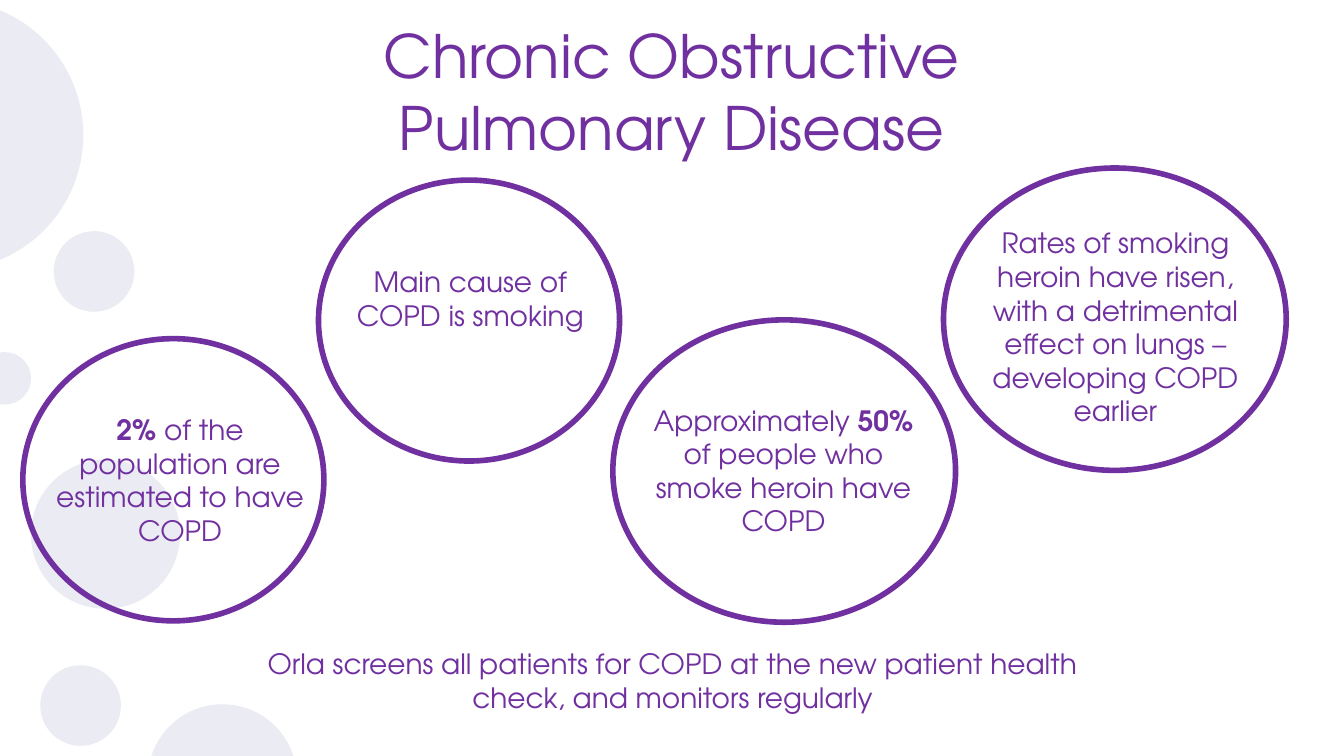
from dataclasses import dataclass

from lxml import etree
from pptx import Presentation
from pptx.dml.color import RGBColor
from pptx.enum.shapes import MSO_SHAPE
from pptx.enum.text import MSO_ANCHOR, MSO_AUTO_SIZE, PP_ALIGN
from pptx.oxml.ns import qn
from pptx.util import Inches, Pt

ELLIPSE = MSO_SHAPE.OVAL
CENTER = PP_ALIGN.CENTER
TOP = MSO_ANCHOR.TOP
GROW = MSO_AUTO_SIZE.SHAPE_TO_FIT_TEXT
BLANK_LAYOUT = 6

# The slide is a 16:9 grid of square cells, 100 columns by 56.25 rows
COLUMNS, ROWS = 100, 56.25
CELL = 0.1


@dataclass(frozen=True)
class Theme:
    font: str = "TeX Gyre Adventor"
    ink: RGBColor = RGBColor(0x70, 0x30, 0xA0)
    dot: RGBColor = RGBColor(0x44, 0x4B, 0x98)
    dot_opacity: int = 11
    title_size: int = 32
    body_size: int = 15
    ring_width: int = 3


def cells(*lengths):
    return [Inches(length * CELL) for length in lengths]


class SlideBuilder:
    def __init__(self, page, theme):
        self.page = page
        self.theme = theme

    def ellipse(self, area, shapes):
        shape = shapes.add_shape(ELLIPSE, *cells(*area))
        shape.shadow.inherit = False
        return shape

    def dot(self, left, top, size):
        shape = self.ellipse((left, top, size, size), self.page.shapes)
        shape.fill.solid()
        shape.fill.fore_color.rgb = self.theme.dot
        shape.line.fill.background()
        color = shape.element.spPr.find(f".//{qn('a:srgbClr')}")
        opacity = etree.SubElement(color, qn("a:alpha"))
        opacity.set("val", str(self.theme.dot_opacity * 1000))

    def ring(self, area, shapes):
        shape = self.ellipse(area, shapes)
        shape.fill.background()
        shape.line.color.rgb = self.theme.ink
        shape.line.width = Pt(self.theme.ring_width)

    def text(self, area, spans, size, shapes=None):
        """Write centred text; spans are (wording, bold) pairs."""
        box = (shapes or self.page.shapes).add_textbox(*cells(*area))
        frame_format = {
            "word_wrap": True, "auto_size": GROW, "vertical_anchor": TOP,
            "margin_left": Inches(0.07), "margin_right": Inches(0.07),
            "margin_top": Inches(0.04), "margin_bottom": Inches(0.04),
        }
        for name, value in frame_format.items():
            setattr(box.text_frame, name, value)
        para = box.text_frame.paragraphs[0]
        para.alignment = CENTER
        for wording, bold in spans:
            span = para.add_run()
            span.text = wording
            span_format = {"name": self.theme.font, "size": Pt(size), "bold": bold}
            for name, value in span_format.items():
                setattr(span.font, name, value)
            span.font.color.rgb = self.theme.ink

    def bubble(self, text_area, ring_area, spans):
        shapes = self.page.shapes.add_group_shape().shapes
        self.text(text_area, spans, self.theme.body_size, shapes)
        self.ring(ring_area, shapes)


# Left, top, diameter
DOTS = [
    (2.3, 34.2, 11.1),
    (-13.9, 0, 20.1),
    (3, 49.5, 6),
    (11, 52.4, 11.1),
    (4, 17.2, 6),
    (-1.6, 26.2, 3.9),
]

# Text area, ring area, spans
LEFT_BUBBLES = [
    ((2.2, 30.3, 22.4, 10.9), (1.7, 25.2, 22.4, 21),
     [("2% ", True), ("of the population are estimated to have COPD", False)]),
    ((47.1, 29.6, 22.4, 10.9), (45.6, 23.8, 25.5, 22.5),
     [("Approximately ", False), ("50% ", True),
      ("of people who smoke heroin have COPD", False)]),
    ((71.8, 16.4, 22.4, 15.9), (70.2, 12.5, 25.5, 22.5),
     [("Rates of smoking heroin have risen, with a detrimental effect on "
       "lungs – developing COPD earlier", False)]),
]
CAUSE_BUBBLE = ((23.8, 19.3, 22.4, 8.1), (23.7, 13.4, 22.4, 20.9),
                [("Main cause of COPD is smoking", False)])


def main():
    deck = Presentation()
    deck.slide_width, deck.slide_height = cells(COLUMNS, ROWS)
    theme = Theme()
    page = deck.slides.add_slide(deck.slide_layouts[BLANK_LAYOUT])
    builder = SlideBuilder(page, theme)

    # Background dots
    for dot in DOTS:
        builder.dot(*dot)

    # Title
    builder.text((24.6, 1, 50.8, 11.5),
                 [("Chronic Obstructive Pulmonary Disease", False)],
                 theme.title_size)

    # Prevalence and heroin facts
    for bubble in LEFT_BUBBLES:
        builder.bubble(*bubble)

    # Closing line
    builder.text((16.3, 47.7, 67.5, 5.8),
                 [("Orla screens all patients for COPD at the new patient "
                   "health check, and monitors regularly", False)],
                 theme.body_size)

    # Main cause
    builder.bubble(*CAUSE_BUBBLE)

    deck.save("out.pptx")


if __name__ == "__main__":
    main()
